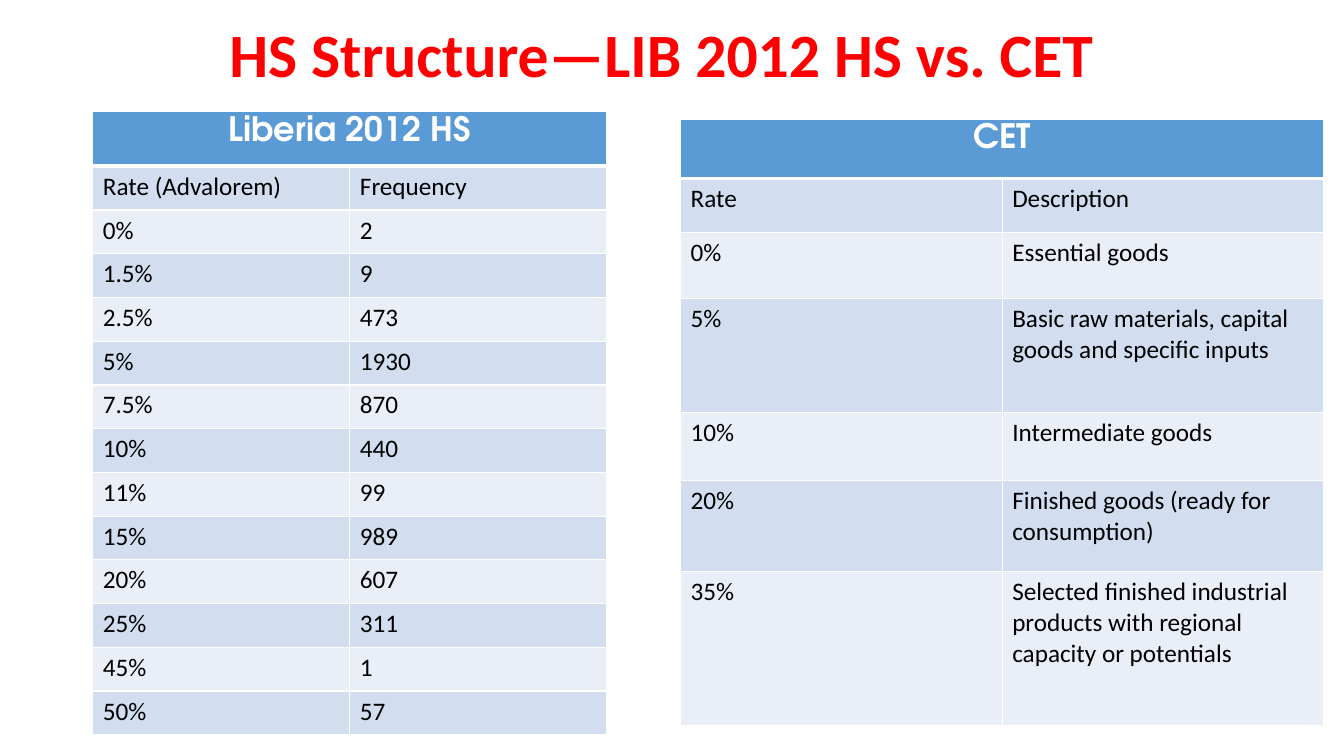
from lxml import etree
from pptx import Presentation
from pptx.dml.color import RGBColor
from pptx.enum.text import MSO_ANCHOR, PP_ALIGN
from pptx.oxml.ns import qn
from pptx.util import Inches, Pt

CENTER = PP_ALIGN.CENTER
LEFT = PP_ALIGN.LEFT
MIDDLE = MSO_ANCHOR.MIDDLE

BODY_FONT = "Calibri"
HEADER_FONT = "TeX Gyre Adventor"
HEADER_FILL = "5B9BD5"
BAND_FILLS = ("EAEFF7", "D2DEEF")
WHITE = "FFFFFF"

LIBERIA_RATES = [
    ("Rate (Advalorem)", "Frequency"),
    ("0%", "2"),
    ("1.5%", "9"),
    ("2.5%", "473"),
    ("5%", "1930"),
    ("7.5%", "870"),
    ("10%", "440"),
    ("11%", "99"),
    ("15%", "989"),
    ("20%", "607"),
    ("25%", "311"),
    ("45%", "1"),
    ("50%", "57"),
]
CET_RATES = [
    ("Rate", "Description"),
    ("0%", "Essential goods"),
    ("5%", "Basic raw materials, capital goods and specific inputs"),
    ("10%", "Intermediate goods"),
    ("20%", "Finished goods (ready for consumption)"),
    ("35%", "Selected finished industrial products with regional capacity or potentials"),
]


def color(hex_string):
    return RGBColor.from_string(hex_string)


def write(text_frame, text, size, font, text_color, bold=False, align=LEFT):
    paragraph = text_frame.paragraphs[0]
    paragraph.alignment = align
    run = paragraph.add_run()
    run.text = text
    run.font.size = Pt(size)
    run.font.name = font
    run.font.bold = bold
    run.font.color.rgb = color(text_color)
    return paragraph


def set_borders(cell, top, bottom):
    """Draw white cell borders; top and bottom are widths in points."""
    properties = cell._tc.get_or_add_tcPr()
    sides = (("a:lnL", 1), ("a:lnR", 1), ("a:lnT", top), ("a:lnB", bottom))
    for position, (tag, width) in enumerate(sides):
        line = etree.Element(qn(tag), w=str(Pt(width)))
        fill = etree.SubElement(line, qn("a:solidFill"))
        etree.SubElement(fill, qn("a:srgbClr"), val=WHITE)
        properties.insert(position, line)


def style_cell(cell, fill, top=1, bottom=1):
    cell.fill.solid()
    cell.fill.fore_color.rgb = color(fill)
    set_borders(cell, top, bottom)


def add_title(slide, text, width):
    box = slide.shapes.add_textbox(0, Inches(0.18), width, Inches(0.79))
    box.text_frame.word_wrap = True
    box.text_frame.vertical_anchor = MIDDLE
    paragraph = write(box.text_frame, text, 44, BODY_FONT, "FF0000", True, CENTER)
    paragraph.line_spacing = 0.9


def add_rate_table(slide, heading, rates, left, top, column_width, row_heights):
    """Add a two-column banded table under one merged heading."""
    frame = slide.shapes.add_table(
        len(row_heights), 2, Inches(left), Inches(top),
        Inches(2 * column_width), Inches(sum(row_heights)))
    table = frame.table
    for column in table.columns:
        column.width = Inches(column_width)
    for row, height in zip(table.rows, row_heights):
        row.height = Inches(height)

    for cell in table.rows[0].cells:
        style_cell(cell, HEADER_FILL, bottom=3)
    header = table.cell(0, 0)
    header.merge(table.cell(0, 1))
    write(header.text_frame, heading, 24, HEADER_FONT, WHITE, True, CENTER)

    for row_index, values in enumerate(rates, start=1):
        for column_index, value in enumerate(values):
            cell = table.cell(row_index, column_index)
            style_cell(cell, BAND_FILLS[row_index % 2], top=3 if row_index == 1 else 1)
            write(cell.text_frame, value, 18, BODY_FONT, "000000")


def main():
    presentation = Presentation()
    presentation.slide_width = Inches(13.33)
    presentation.slide_height = Inches(7.5)
    slide = presentation.slides.add_slide(presentation.slide_layouts[6])

    add_title(slide, "HS Structure—LIB 2012 HS vs. CET", Inches(13.13))
    add_rate_table(slide, "Liberia 2012 HS", LIBERIA_RATES, 0.92, 1.11, 2.55,
                   [0.54] + [0.434] * len(LIBERIA_RATES))
    add_rate_table(slide, "CET", CET_RATES, 6.75, 1.18, 3.19,
                   [0.59, 0.54, 0.65, 1.13, 0.68, 0.9, 1.53])
    presentation.save("out.pptx")


if __name__ == "__main__":
    main()
